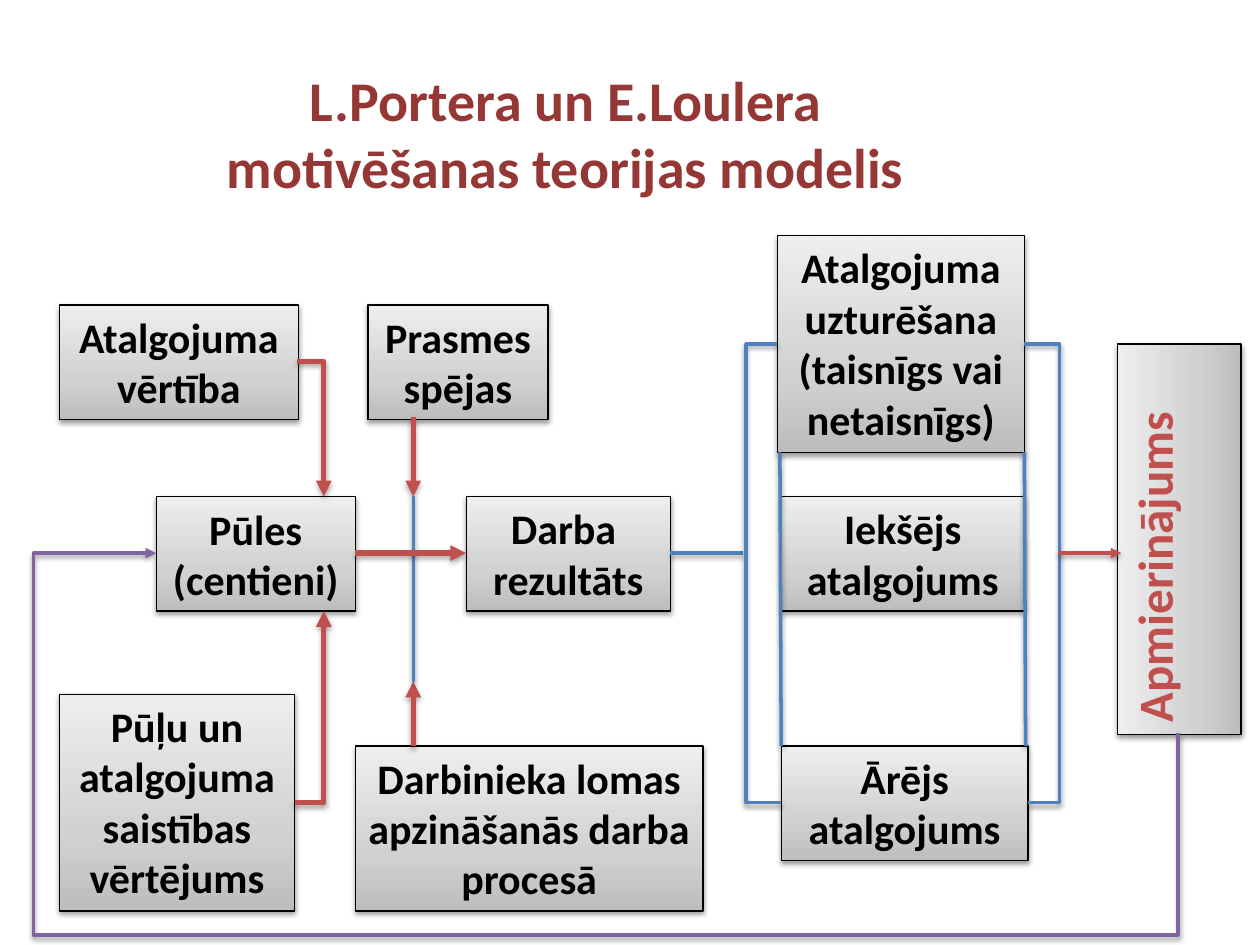
from copy import deepcopy

from lxml import etree
from pptx import Presentation
from pptx.dml.color import RGBColor
from pptx.enum import shapes, text
from pptx.oxml import ns
from pptx.util import Inches, Pt

BLACK = RGBColor(0x00, 0x00, 0x00)
MAROON = RGBColor(0x95, 0x37, 0x35)
RED = RGBColor(0xC0, 0x50, 0x4D)
BLUE = RGBColor(0x4F, 0x81, 0xBD)
PURPLE = RGBColor(0x80, 0x64, 0xA2)
GRADIENT = [
    (0, RGBColor(0xBD, 0xBD, 0xBD)),
    (0.35, RGBColor(0xD1, 0xD1, 0xD1)),
    (1, RGBColor(0xEE, 0xEE, 0xEE)),
]

MIDDLE_TOP, MIDDLE_Y, MIDDLE_BOTTOM = 3.94, 4.39, 4.85
BOTTOM_TOP = 5.92
EFFORT_X, SKILLS_X = 2.57, 3.28
REWARD_TOP_Y, REWARD_BOTTOM_Y = 2.73, 6.37
SPLIT_X, MERGE_X = 5.92, 8.41

BOXES = [
    ((3.7, MIDDLE_TOP, 1.62, 0.91), ["Darba ", "rezultāts"]),
    ((6.2, MIDDLE_TOP, 1.93, 0.91), ["Iekšējs atalgojums"]),
    ((0.47, 2.42, 1.9, 0.91), ["Atalgojuma vērtība"]),
    ((0.47, 5.51, 1.87, 1.72), ["Pūļu un atalgojuma", "saistības vērtējums"]),
    ((2.92, 2.42, 1.43, 0.91), ["Prasmes", "spējas"]),
    ((2.82, BOTTOM_TOP, 2.76, 1.31), ["Darbinieka lomas apzināšanās darba procesā"]),
    ((6.17, 1.87, 1.96, 1.72), ["Atalgojuma", "uzturēšana", "(taisnīgs vai netaisnīgs)"]),
    ((6.2, BOTTOM_TOP, 1.96, 0.91), ["Ārējs atalgojums"]),
]


def add_child(parent, tag, **attributes):
    child = etree.SubElement(parent, ns.qn(tag))
    for name, value in attributes.items():
        child.set(name, str(value))
    return child


def add_shadow(properties, distance, opacity):
    effects = properties.find(ns.qn("a:effectLst"))
    if effects is None:
        effects = add_child(properties, "a:effectLst")
    shadow = add_child(effects, "a:outerShdw", blurRad=Pt(3.1), dist=Pt(distance),
                       dir=90 * 60000, rotWithShape=0)
    color = add_child(shadow, "a:srgbClr", val=BLACK)
    add_child(color, "a:alpha", val=opacity * 1000)


def write_lines(frame, lines, size, color, align):
    frame.word_wrap = True
    frame.auto_size = text.MSO_AUTO_SIZE.NONE
    for index, line in enumerate(lines):
        paragraph = frame.paragraphs[0] if index == 0 else frame.add_paragraph()
        paragraph.alignment = align
        run = paragraph.add_run()
        run.text = line
        run.font.name = "Calibri"
        run.font.size = Pt(size)
        run.font.bold = True
        run.font.color.rgb = color


def add_title(slide):
    title = slide.shapes.title
    title.left, title.top = Inches(1.41), Inches(0.47)
    title.width, title.height = Inches(6.16), Inches(1.18)
    title.text_frame.vertical_anchor = text.MSO_ANCHOR.TOP
    write_lines(title.text_frame, ["L.Portera un E.Loulera motivēšanas teorijas modelis"],
                32, MAROON, text.PP_ALIGN.CENTER)


def fill_gradient(box):
    box.fill.gradient()
    box.fill.gradient_angle = 90
    stop_list = box._element.spPr.find(".//" + ns.qn("a:gsLst"))
    stop_list.append(deepcopy(stop_list[-1]))
    for stop, (position, color) in zip(box.fill.gradient_stops, GRADIENT):
        stop.position = position
        stop.color.rgb = color


def add_box(slide, place, lines, size=24, color=BLACK, align=text.PP_ALIGN.CENTER,
            anchor=text.MSO_ANCHOR.TOP):
    box = slide.shapes.add_shape(shapes.MSO_SHAPE.RECTANGLE, *map(Inches, place))
    fill_gradient(box)
    box.line.color.rgb = BLACK
    box.line.width = Pt(0.75)
    box.shadow.inherit = False
    add_shadow(box._element.spPr, 1.6, 38)
    box.text_frame.vertical_anchor = anchor
    write_lines(box.text_frame, lines, size, color, align)
    return box


def add_link(slide, start, end, color, width=2, arrow=False, bend=None, adjust=()):
    kind = shapes.MSO_CONNECTOR.ELBOW if bend else shapes.MSO_CONNECTOR.STRAIGHT
    link = slide.shapes.add_connector(kind, *map(Inches, start + end))
    link.line.color.rgb = color
    link.line.width = Pt(width)
    properties = link._element.spPr
    if bend:
        geometry = properties.find(ns.qn("a:prstGeom"))
        geometry.set("prst", bend)
        guides = geometry.find(ns.qn("a:avLst"))
        for number, ratio in enumerate(adjust, 1):
            add_child(guides, "a:gd", name=f"adj{number}", fmla=f"val {round(ratio * 100000)}")
    if arrow:
        add_child(properties.find(ns.qn("a:ln")), "a:tailEnd", type="triangle")
    if width == 3:
        add_shadow(properties, 1.8, 35)
    else:
        add_shadow(properties, 1.6, 38)
    return link


def add_bracket(slide, start_x, end_x, outer_x):
    add_link(slide, (start_x, REWARD_TOP_Y), (end_x, REWARD_BOTTOM_Y), BLUE,
             bend="bentConnector3", adjust=[(outer_x - start_x) / (end_x - start_x)])


def add_feedback(slide):
    feedback = add_link(slide, (6.01, 1.05), (4.58, 9.16), PURPLE, arrow=True,
                        bend="bentConnector4", adjust=[-1.12, 1.12])
    feedback._element.spPr.find(ns.qn("a:xfrm")).set("rot", str(90 * 60000))


def add_links(slide):
    add_link(slide, (2.36, 2.87), (EFFORT_X, MIDDLE_TOP), RED, 3, True, "bentConnector2")
    add_feedback(slide)
    add_link(slide, (2.34, 6.37), (EFFORT_X, MIDDLE_BOTTOM), RED, 3, True, "bentConnector2")
    add_link(slide, (SKILLS_X, 3.31), (SKILLS_X, MIDDLE_TOP), RED, 3, True)
    add_link(slide, (SKILLS_X, BOTTOM_TOP), (SKILLS_X, 5.41), RED, 3, True)
    add_link(slide, (SKILLS_X, MIDDLE_TOP), (SKILLS_X, 5.41), BLUE)
    add_link(slide, (2.82, MIDDLE_Y), (3.7, MIDDLE_Y), RED, 3, True)
    add_link(slide, (5.32, MIDDLE_Y), (5.9, MIDDLE_Y), BLUE)
    add_bracket(slide, 6.17, 6.2, SPLIT_X)
    add_bracket(slide, 8.13, 8.16, MERGE_X)
    for top_x, bottom_x in [(6.19, 6.2), (8.13, 8.14)]:
        add_link(slide, (top_x, 3.59), (bottom_x, BOTTOM_TOP), BLUE)
    add_link(slide, (8.4, MIDDLE_Y), (8.9, MIDDLE_Y), RED, arrow=True)


def main():
    deck = Presentation()
    deck.slide_width, deck.slide_height = Inches(10), Inches(7.5)
    slide = deck.slides.add_slide(deck.slide_layouts[5])
    add_title(slide)
    add_box(slide, (1.24, MIDDLE_TOP, 1.58, 0.91), ["Pūles", "(centieni)"],
            anchor=text.MSO_ANCHOR.MIDDLE)
    for place, lines in BOXES:
        add_box(slide, place, lines)
    satisfaction = add_box(slide, (7.81, 3.79, 3.1, 0.98), ["Apmierinājums"], 28, RED,
                           text.PP_ALIGN.LEFT)
    satisfaction.rotation = 270
    add_links(slide)
    deck.save("out.pptx")


if __name__ == "__main__":
    main()
